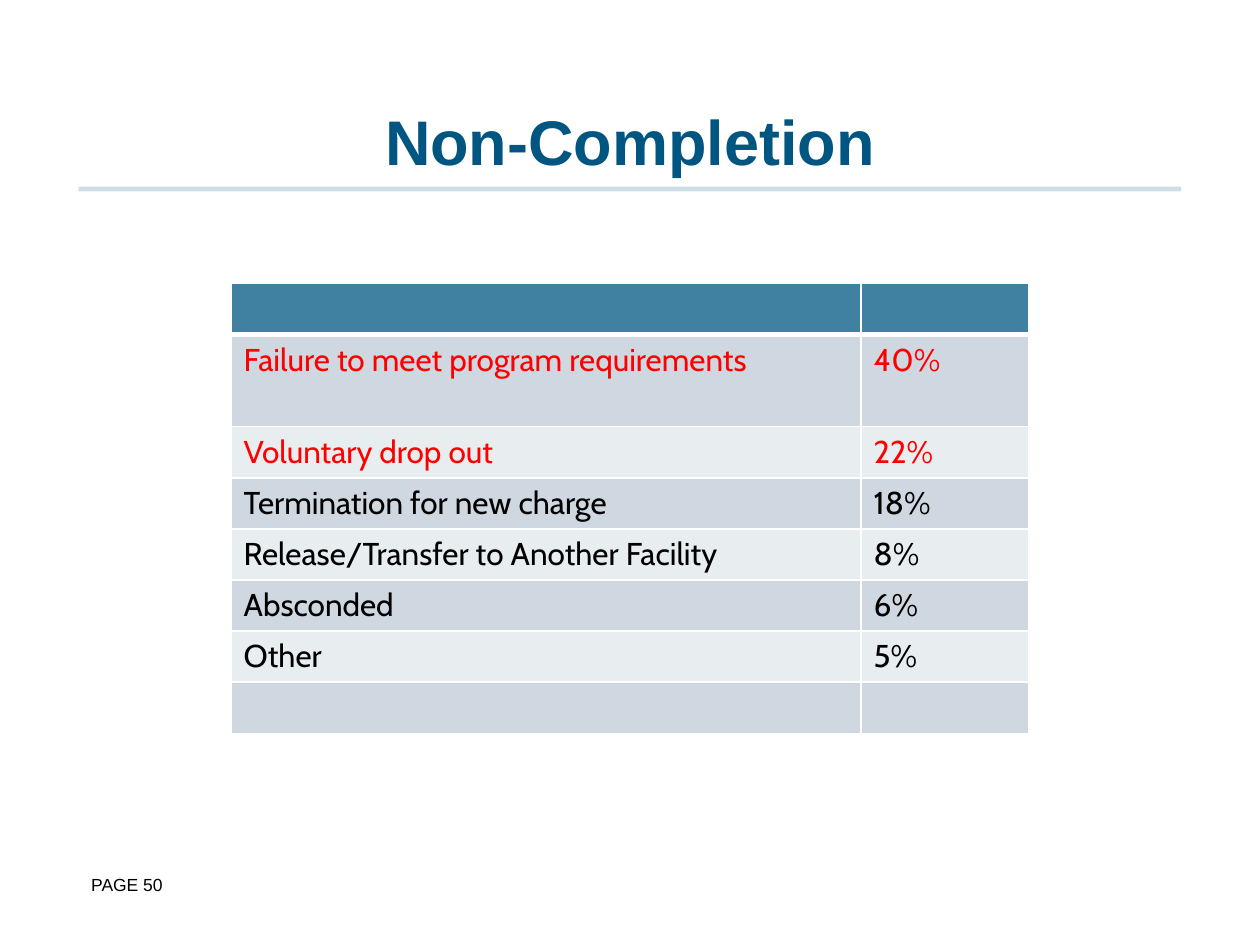
import pptx
import pptx.dml.color
import pptx.enum.shapes
import pptx.enum.text
import pptx.oxml
import pptx.oxml.ns
import pptx.util
from lxml import etree

NAVY = pptx.dml.color.RGBColor(0x00, 0x55, 0x81)
HEADER = pptx.dml.color.RGBColor(0x40, 0x80, 0xA1)
BAND_DARK = pptx.dml.color.RGBColor(0xCF, 0xD8, 0xE0)
BAND_LIGHT = pptx.dml.color.RGBColor(0xE8, 0xED, 0xF0)
WHITE = pptx.dml.color.RGBColor(0xFF, 0xFF, 0xFF)
BLACK = pptx.dml.color.RGBColor(0x00, 0x00, 0x00)
RED = pptx.dml.color.RGBColor(0xFF, 0x00, 0x00)

REASONS = [
    ("", "", BLACK),
    ("Failure to meet program requirements", "40%", RED),
    ("Voluntary drop out", "22%", RED),
    ("Termination for new charge", "18%", BLACK),
    ("Release/Transfer to Another Facility", "8%", BLACK),
    ("Absconded", "6%", BLACK),
    ("Other", "5%", BLACK),
    ("", "", BLACK),
]


def format_text(paragraph, font_name, size, color, bold=False):
    for font in [paragraph.font] + [run.font for run in paragraph.runs]:
        font.name = font_name
        font.size = pptx.util.Pt(size)
        font.bold = bold
        font.color.rgb = color


def set_borders(cell, bottom_width, top_width):
    """Draw white borders; they must come before the fill in the cell's XML."""
    properties = cell._tc.get_or_add_tcPr()
    widths = {"L": 1, "R": 1, "T": top_width, "B": bottom_width}
    for side, width in widths.items():
        properties.append(pptx.oxml.parse_xml(
            f'<a:ln{side} {pptx.oxml.ns.nsdecls("a")} w="{pptx.util.Pt(width)}">'
            f'<a:solidFill><a:srgbClr val="{WHITE}"/></a:solidFill></a:ln{side}>'))


presentation = pptx.Presentation()
presentation.slide_width = pptx.util.Inches(10)
presentation.slide_height = pptx.util.Inches(7.5)
col = presentation.slide_width / 16
row = presentation.slide_height / 20
slide = presentation.slides.add_slide(presentation.slide_layouts[5])

# Title and the pale rule under it
title = slide.shapes.title
title.left, title.top = int(0.8 * col), int(0.24 * row)
title.width, title.height = int(14.4 * col), int(3.52 * row)
heading = title.text_frame
heading.text = "Non-Completion"
heading.vertical_anchor = pptx.enum.text.MSO_ANCHOR.BOTTOM
heading.margin_left = heading.margin_right = 0
heading.margin_top = heading.margin_bottom = 0
heading.paragraphs[0].alignment = pptx.enum.text.PP_ALIGN.CENTER
format_text(heading.paragraphs[0], "Arial", 36, NAVY, bold=True)

rule = slide.shapes.add_connector(
    pptx.enum.shapes.MSO_CONNECTOR.STRAIGHT,
    int(col), int(4 * row), int(15 * col), int(4 * row))
rule.line.width = pptx.util.Pt(2.75)
rule.line.color.rgb = NAVY
rule_color = rule.line._ln.find(".//" + pptx.oxml.ns.qn("a:srgbClr"))
etree.SubElement(rule_color, pptx.oxml.ns.qn("a:alpha"), val="20000")
etree.SubElement(rule._element.spPr, pptx.oxml.ns.qn("a:effectLst"))

# Reasons table, centred, with one taller row below the header
column_widths = [8 * col, 2.13 * col]
table_width = sum(column_widths)
table_height = 9.5 * row
first_reason_height = 1.95 * row
row_height = (table_height - first_reason_height) / (len(REASONS) - 1)
reasons_table = slide.shapes.add_table(
    len(REASONS), 2, int((presentation.slide_width - table_width) / 2),
    int(6 * row), int(table_width), int(table_height)).table
for column, width in zip(reasons_table.columns, column_widths):
    column.width = int(width)

for index, (reason, share, color) in enumerate(REASONS):
    reasons_table.rows[index].height = int(
        first_reason_height if index == 1 else row_height)
    for cell, content in zip(reasons_table.rows[index].cells, (reason, share)):
        set_borders(cell, bottom_width=3 if index == 0 else 1,
                    top_width=3 if index == 1 else 1)
        cell.fill.solid()
        if index == 0:
            cell.fill.fore_color.rgb = HEADER
        else:
            cell.fill.fore_color.rgb = BAND_DARK if index % 2 else BAND_LIGHT
        cell.text_frame.text = content
        format_text(cell.text_frame.paragraphs[0], "Cabin", 18, color)

# Page number
page_number = slide.shapes.add_textbox(
    int(col), int(18.37 * row), int(1.7 * col), int(1.39 * row)).text_frame
page_number.word_wrap = True
page_number.text = "PAGE 50"
page_number.paragraphs[0].space_after = pptx.util.Pt(6)
format_text(page_number.paragraphs[0], "Arial", 10, BLACK)

presentation.save("out.pptx")
